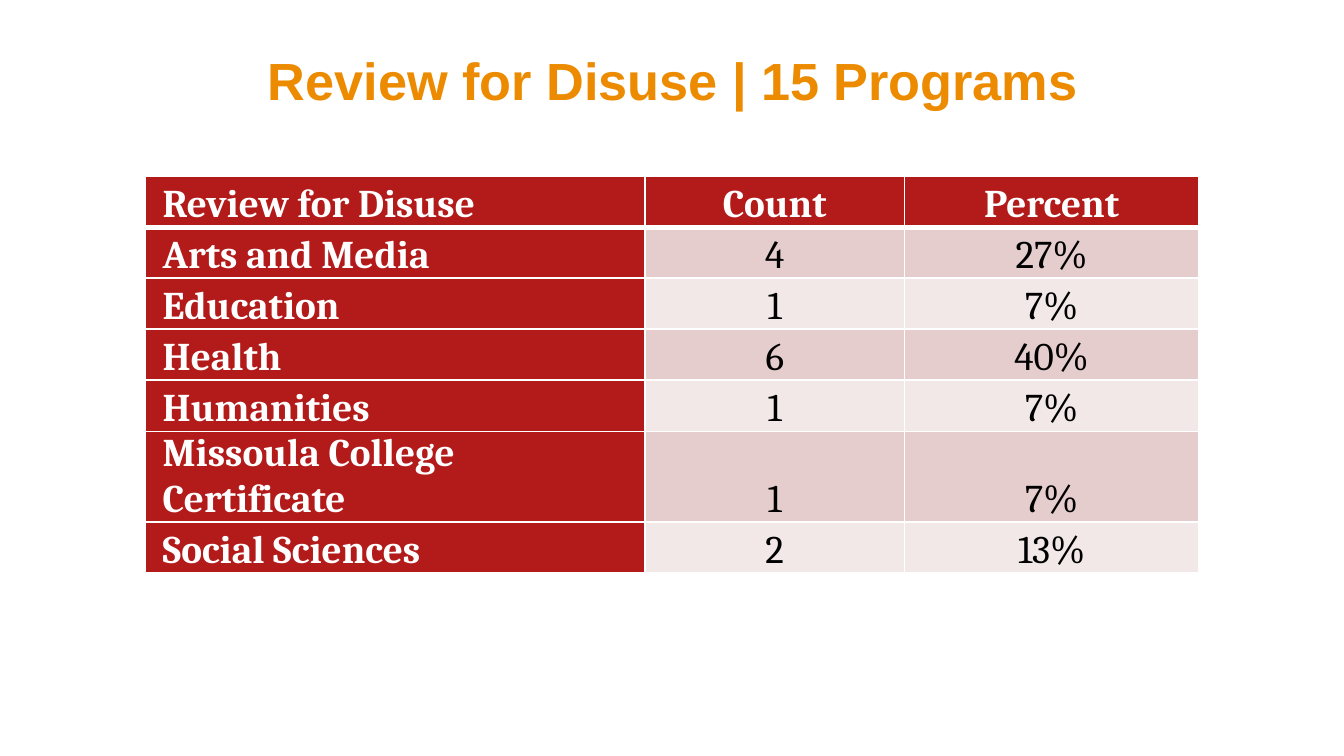
from pptx import Presentation
from pptx.dml.color import RGBColor
from pptx.enum.text import MSO_ANCHOR as Anchor, PP_ALIGN as Align
from pptx.oxml import parse_xml
from pptx.oxml.ns import nsdecls
from pptx.util import Inches, Pt

ORANGE = RGBColor(0xED, 0x8B, 0x00)
RED = RGBColor(0xB3, 0x1B, 0x1B)
ROSE = RGBColor(0xE5, 0xCD, 0xCD)
PALE = RGBColor(0xF2, 0xE8, 0xE8)
WHITE = RGBColor(0xFF, 0xFF, 0xFF)
BLACK = RGBColor(0x00, 0x00, 0x00)

ROWS = [
    ("Review for Disuse", "Count", "Percent"),
    ("Arts and Media", "4", "27%"),
    ("Education", "1", "7%"),
    ("Health", "6", "40%"),
    ("Humanities", "1", "7%"),
    ("Missoula College Certificate", "1", "7%"),
    ("Social Sciences", "2", "13%"),
]
WIDTHS = [3.72, 1.93, 2.19]
HEIGHT = 0.38


def style(para, color, **font):
    para.font.color.rgb = color
    for name, value in font.items():
        setattr(para.font, name, value)


def edge(cell, sides):
    """Draw white cell borders; sides maps L, R, T, B (in that order) to points."""
    props = cell._tc.get_or_add_tcPr()
    for pos, (side, width) in enumerate(sides.items()):
        props.insert(pos, parse_xml(
            f'<a:ln{side} {nsdecls("a")} w="{Pt(width)}"><a:solidFill>'
            f'<a:srgbClr val="{WHITE}"/></a:solidFill></a:ln{side}>'))


prs = Presentation()
prs.slide_width = Inches(10)
prs.slide_height = Inches(10 * 9 / 16)
slide = prs.slides.add_slide(prs.slide_layouts[5])

title = slide.shapes.title
title.left, title.top = Inches(0.17), Inches(0.31)
title.width, title.height = Inches(9.67), Inches(0.56)
title.text_frame.text = "Review for Disuse | 15 Programs"
title.text_frame.vertical_anchor = Anchor.MIDDLE
head = title.text_frame.paragraphs[0]
head.alignment = Align.CENTER
style(head, ORANGE, name="Arial", size=Pt(28), bold=True)

table = slide.shapes.add_table(
    len(ROWS), len(WIDTHS), Inches(1.08), Inches(1.31),
    Inches(sum(WIDTHS)), Inches(HEIGHT * len(ROWS))).table
table.first_col = True
for col, width in zip(table.columns, WIDTHS):
    col.width = Inches(width)

CELL = {
    "vertical_anchor": Anchor.BOTTOM,
    "margin_left": Inches(0.13), "margin_right": Inches(0.13),
    "margin_top": 0, "margin_bottom": 0,
}
for r, row in enumerate(ROWS):
    table.rows[r].height = Inches(HEIGHT)
    for c, text in enumerate(row):
        cell = table.cell(r, c)
        label = r == 0 or c == 0
        cell.text = text
        for name, value in CELL.items():
            setattr(cell, name, value)
        cell.fill.solid()
        cell.fill.fore_color.rgb = RED if label else ROSE if r % 2 else PALE
        edge(cell, {"L": 1, "R": 1, "T": 3 if r == 1 else 1, "B": 3 if r == 0 else 1})
        para = cell.text_frame.paragraphs[0]
        para.alignment = Align.CENTER if c else Align.LEFT
        style(para, WHITE if label else BLACK, name="Cambria", size=Pt(21), bold=label)

prs.save("out.pptx")
